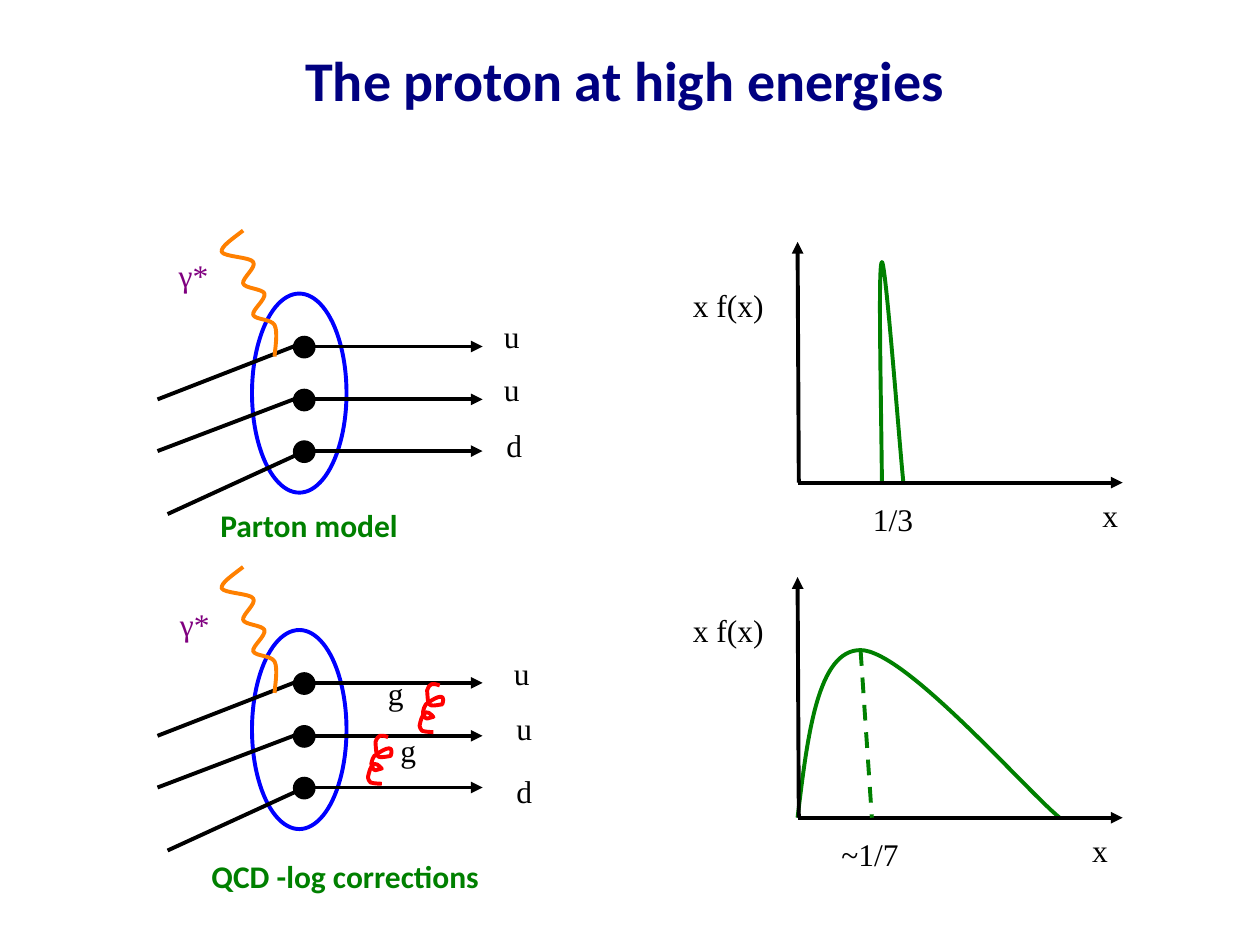
from lxml import etree
from pptx import Presentation
from pptx.dml.color import RGBColor
from pptx.enum.dml import MSO_LINE
from pptx.enum.shapes import MSO_CONNECTOR, MSO_SHAPE
from pptx.enum.text import MSO_ANCHOR as ANCHOR, PP_ALIGN as ALIGN
from pptx.oxml.ns import qn
from pptx.util import Inches, Pt

BLACK, NAVY, BLUE, GREEN = "000000", "000080", "0000FF", "008000"
ORANGE, RED, PURPLE = "FF8000", "FF0000", "800080"
SERIF = {"name": "Times New Roman", "size": Pt(18)}
CAPTION = {"name": "Calibri", "size": Pt(18), "bold": True}
TITLE = {"name": "Calibri", "size": Pt(32), "bold": True}

# Curves: a start point, then three Bezier points for each segment
PHOTON = [(.18, 0), (.09, .07), (0, .13), (.01, .17),
          (.03, .21), (.24, .21), (.26, .25), (.29, .29), (.17, .38), (.18, .42),
          (.19, .46), (.33, .46), (.35, .5), (.36, .55), (.25, .63), (.26, .67),
          (.28, .71), (.4, .7), (.43, .75), (.46, .81), (.43, .96), (.43, 1)]
GLUON = [(.16, .02), (.1, 0), (.08, 0), (.06, .06),
         (.07, .19), (.06, .19), (.18, .17), (.22, .05), (.09, .14), (.05, .17),
         (.03, .2), (.01, .26), (.05, .28), (.06, .29), (.09, .27), (.11, .27),
         (.09, .25), (.06, .21), (.03, .25), (.01, .28), (0, .34), (0, .34),
         (.01, .35), (0, .37), (.02, .38), (.05, .39), (.11, .39), (.11, .39)]
SPIKE = [(.67, 1.91), (.66, 1.04), (.64, .16), (.67, .16),
         (.7, .16), (.81, 1.62), (.84, 1.91)]
HUMP = [(0, 1.91), (.08, 1.25), (.16, .58), (.5, .58),
        (.85, .58), (1.82, 1.7), (2.08, 1.91)]
QUARK_ROWS = [.92, 1.34, 1.75]
INCOMING = [((0, 1.34), (1.08, .92)), ((0, 1.75), (1.08, 1.34)),
            ((.08, 2.25), (1.17, 1.75))]


def rgb(color):
    return RGBColor.from_string(color)


def set_line(sp, color, width=2.25):
    sp.line.color.rgb = rgb(color)
    sp.line.width = Pt(width)


def add_label(slide, text, x, y, w, h=.5, color=BLACK, font=SERIF):
    sp = slide.shapes.add_textbox(Inches(x), Inches(y), Inches(w), Inches(h))
    tf = sp.text_frame
    tf.word_wrap = False
    p = tf.paragraphs[0]
    r = p.add_run()
    r.text = text
    for name, value in font.items():
        setattr(r.font, name, value)
    r.font.color.rgb = rgb(color)
    return sp


def add_ellipse(slide, x, y, w, h, color, width=2.25, filled=False):
    sp = slide.shapes.add_shape(MSO_SHAPE.OVAL, Inches(x), Inches(y),
                                Inches(w), Inches(h))
    sp.shadow.inherit = False
    if filled:
        sp.fill.solid()
        sp.fill.fore_color.rgb = rgb(color)
    else:
        sp.fill.background()
    set_line(sp, color, width)


def add_segment(slide, x, y, start, end, color=BLACK, arrow=False, dash=None):
    sp = slide.shapes.add_connector(
        MSO_CONNECTOR.STRAIGHT, Inches(x + start[0]), Inches(y + start[1]),
        Inches(x + end[0]), Inches(y + end[1]))
    set_line(sp, color)
    if dash:
        sp.line.dash_style = dash
    if arrow:
        etree.SubElement(sp.line._get_or_add_ln(), qn("a:tailEnd"), type="triangle")
    etree.SubElement(sp._element.spPr, qn("a:effectLst"))


def add_curve(slide, x, y, points, color):
    """Draw an open freeform, joining each three points into a cubic Bezier."""
    pts = [(Inches(x + px), Inches(y + py)) for px, py in points]
    builder = slide.shapes.build_freeform(*pts[0])
    builder.add_line_segments(pts[1:], close=False)
    sp = builder.convert_to_shape()
    sp.shadow.inherit = False
    sp.fill.background()
    set_line(sp, color)
    lines = list(sp._element.iter(qn("a:lnTo")))
    for i in range(0, len(lines), 3):
        first, *rest = lines[i:i + 3]
        first.tag = qn("a:cubicBezTo")
        for ln in rest:
            first.append(ln[0])
            ln.getparent().remove(ln)


def add_title(slide, text, x, y, w, h):
    tf = add_label(slide, text, x, y, w, h, NAVY, TITLE).text_frame
    tf.word_wrap = True
    tf.vertical_anchor = ANCHOR.MIDDLE
    tf.paragraphs[0].alignment = ALIGN.CENTER


def add_scattering(slide, x, y, photon_at, quarks, caption, gluons=()):
    """Draw a photon hitting a proton; label positions are relative to x, y."""
    add_ellipse(slide, x + .75, y + .5, .75, 1.58, BLUE)
    for row, (start, end) in zip(QUARK_ROWS, INCOMING):
        add_ellipse(slide, x + 1.08, y + row - .08, .17, .17, BLACK, .75, True)
        add_segment(slide, x, y, start, end)
        add_segment(slide, x, y, (1.17, row), (2.58, row), arrow=True)
    add_curve(slide, x + .5, y, PHOTON, ORANGE)
    for (gx, gy), (tx, ty) in gluons:
        add_curve(slide, x + gx, y + gy, GLUON, RED)
        add_label(slide, "g", x + tx, y + ty, .39)
    add_label(slide, "γ*", x + photon_at[0], y + photon_at[1], .47, color=PURPLE)
    for text, qx, qy in quarks:
        add_label(slide, text, x + qx, y + qy, .39)
    text, cx, cy, cw = caption
    add_label(slide, text, x + cx, y + cy, cw, .4, GREEN, CAPTION)


def add_graph(slide, x, y, curve, labels, peak=None):
    """Draw axes and a curve; peak holds the two ends of a dashed marker."""
    add_curve(slide, x, y, curve, GREEN)
    add_segment(slide, x, y, (.01, 1.91), (0, 0), arrow=True)
    add_segment(slide, x, y, (0, 1.91), (2.58, 1.91), arrow=True)
    if peak:
        add_segment(slide, x, y, *peak, color=GREEN, dash=MSO_LINE.DASH)
    for text, lx, ly, w in labels:
        add_label(slide, text, x + lx, y + ly, w)


def main():
    prs = Presentation()
    prs.slide_width, prs.slide_height = Inches(10), Inches(7.5)
    slide = prs.slides.add_slide(prs.slide_layouts[6])
    add_title(slide, "The proton at high energies", .71, 0, 8.5, 1.25)

    add_scattering(slide, 1.25, 1.83, (.07, .15),
                   [("u", 2.65, .64), ("u", 2.65, 1.06), ("d", 2.67, 1.5)],
                   ("Parton model", .4, 2.14, 1.62))
    add_graph(slide, 6.33, 1.92, SPIKE,
              [("x f(x)", -.93, .3, .94), ("1/3", .5, 2, .66), ("x", 2.32, 1.97, .37)])

    add_scattering(slide, 1.25, 4.5, (.08, .25),
                   [("u", 2.73, .64), ("u", 2.75, 1.08), ("d", 2.75, 1.58)],
                   ("QCD -log corrections", .33, 2.25, 2.35),
                   [((2.08, .92), (1.73, .8)), ((1.67, 1.33), (1.83, 1.25))])
    add_graph(slide, 6.33, 4.58, HUMP,
              [("x f(x)", -.93, .22, .94), ("~1/7", .25, 2, .86), ("x", 2.24, 1.97, .37)],
              ((.5, .58), (.59, 1.91)))
    prs.save("out.pptx")


if __name__ == "__main__":
    main()
